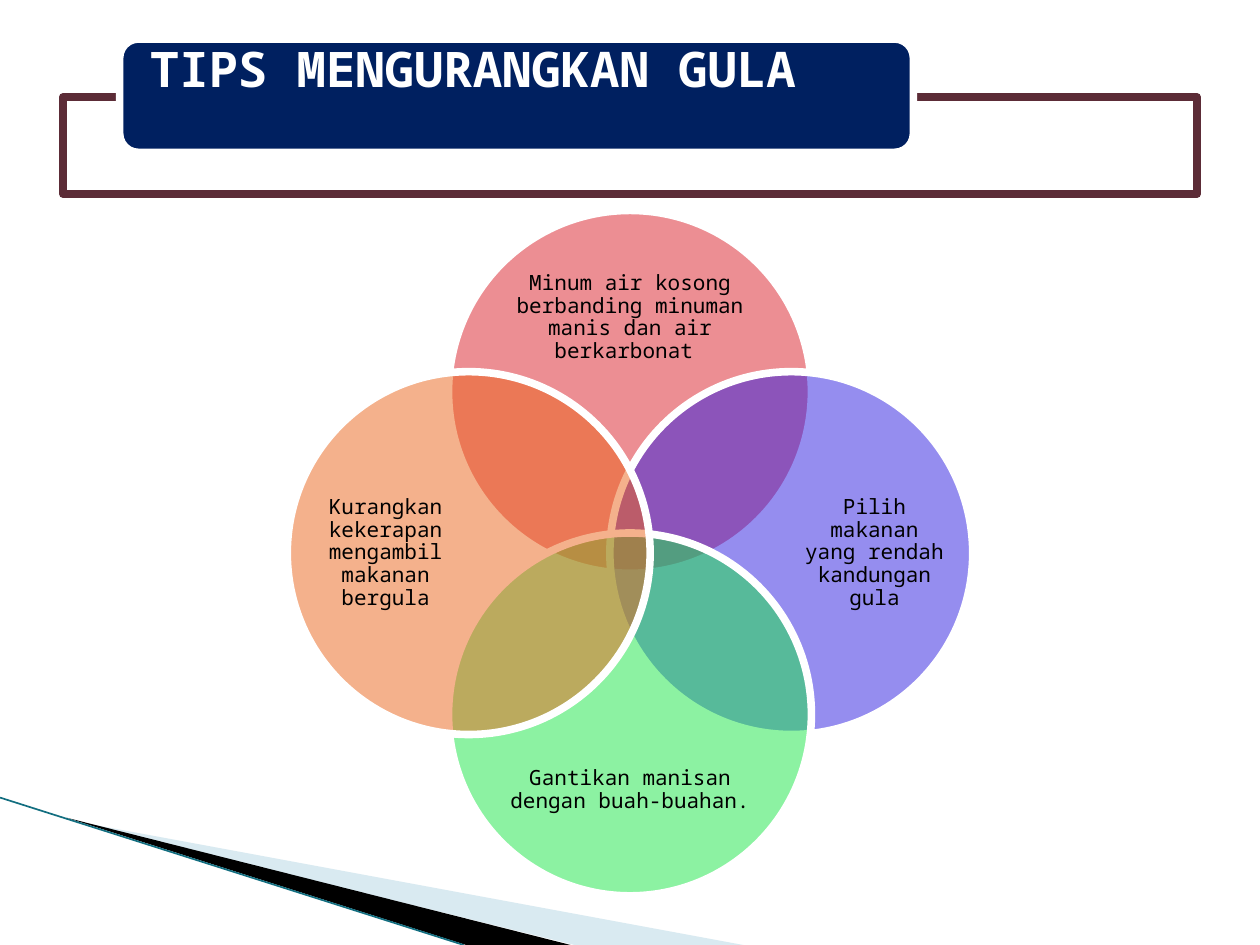
from dataclasses import dataclass

from lxml import etree
from pptx import Presentation
from pptx.dml.color import RGBColor
from pptx.enum.shapes import MSO_CONNECTOR, MSO_SHAPE
from pptx.enum.text import MSO_ANCHOR, PP_ALIGN
from pptx.oxml.ns import qn
from pptx.util import Inches, Pt

ELLIPSE, RECTANGLE, ROUNDED = MSO_SHAPE.OVAL, MSO_SHAPE.RECTANGLE, MSO_SHAPE.ROUNDED_RECTANGLE
STRAIGHT = MSO_CONNECTOR.STRAIGHT
TOP, MIDDLE = MSO_ANCHOR.TOP, MSO_ANCHOR.MIDDLE
LEFT, CENTER = PP_ALIGN.LEFT, PP_ALIGN.CENTER
TITLE_ONLY = 5


@dataclass(frozen=True)
class Theme:
    """Colours, font and type sizes of the slide."""
    font: str = "Noto Sans Mono"
    title_size: float = 28
    label_size: float = 12
    outline: float = 4.33
    white: str = "FFFFFF"
    black: str = "000000"
    navy: str = "002060"
    maroon: str = "5C2C37"
    pale_blue: str = "A0CBDC"
    teal: str = "126E80"
    red: str = "DA1F28"
    violet: str = "2D1CE1"
    green: str = "1BE747"
    orange: str = "EB641B"


THEME = Theme()
CENTER_X, CENTER_Y = 5, 4.39
DIAMETER, REACH = 2.88, 1.28
WIDE, TALL = (2.22, 0.92), (1.11, 2.22)
PETALS = [
    ("Minum air kosong berbanding minuman manis dan air berkarbonat ",
     THEME.red, (0, -1), WIDE, (0, -1.87)),
    ("Pilih makanan yang rendah kandungan gula",
     THEME.violet, (1, 0), TALL, (1.94, 0)),
    ("Gantikan manisan dengan buah-buahan.",
     THEME.green, (0, 1), WIDE, (0, 1.88)),
    ("Kurangkan kekerapan mengambil makanan bergula",
     THEME.orange, (-1, 0), TALL, (-1.94, 0)),
]


def inches(*values):
    """Convert several numbers to lengths."""
    return [Inches(value) for value in values]


def centred(x, y, width, height):
    """Return the left, top, width and height of a box around a point."""
    return x - width / 2, y - height / 2, width, height


def set_fill(shape, color, opacity=100):
    """Give a shape a solid fill with an opacity in percent."""
    shape.shadow.inherit = False
    shape.fill.solid()
    shape.fill.fore_color.rgb = RGBColor.from_string(color)
    if opacity < 100:
        tone = shape.fill._xPr.find(qn("a:solidFill"))[0]
        etree.SubElement(tone, qn("a:alpha"), val=str(opacity * 1000))


def set_line(shape, color, width):
    """Give a shape or connector a solid line."""
    shape.line.color.rgb = RGBColor.from_string(color)
    shape.line.width = Pt(width)


def add_outlined(slide, kind, place, fill, line, opacity=100):
    """Add a preset shape with the heavy outline."""
    shape = slide.shapes.add_shape(kind, *inches(*place))
    set_fill(shape, fill, opacity)
    set_line(shape, line, THEME.outline)


def add_wedge(slide, points, color, opacity=100):
    """Add a closed freeform without an outline."""
    start, *rest = [inches(*point) for point in points]
    builder = slide.shapes.build_freeform(*start, scale=1.0)
    builder.add_line_segments(rest, close=True)
    wedge = builder.convert_to_shape()
    set_fill(wedge, color, opacity)
    wedge.line.fill.background()


def add_stroke(slide, start, end, color, width):
    """Add a straight line without a shadow."""
    stroke = slide.shapes.add_connector(STRAIGHT, *inches(*start, *end))
    set_line(stroke, color, width)
    etree.SubElement(stroke._element.spPr, qn("a:effectLst"))


def write(box, text, size, color, align, anchor, margin=0, bold=False):
    """Put one formatted paragraph in a box."""
    frame = box.text_frame
    frame.word_wrap = True
    frame.vertical_anchor = anchor
    frame.margin_left = frame.margin_right = Inches(margin)
    frame.margin_top = frame.margin_bottom = 0
    para = frame.paragraphs[0]
    para.alignment = align
    para.line_spacing = 0.9
    para.space_before = Pt(0)
    span = para.add_run()
    span.text = text
    span.font.name = THEME.font
    span.font.size = Pt(size)
    span.font.bold = bold
    span.font.color.rgb = RGBColor.from_string(color)


def add_corner(slide):
    """Draw the wedges and the line in the lower left corner."""
    add_wedge(slide, [(0.55, 6.51), (5.9, 7.5), (4.56, 7.5)], THEME.pale_blue, 40)
    add_wedge(slide, [(0.53, 6.49), (4.53, 7.5), (3.7, 7.5)], THEME.black)
    add_stroke(slide, (0, 6.33), (3.68, 7.5), THEME.teal, 0.95)


def add_petal(slide, text, color, direction, label_size, label_offset):
    """Add one circle of the diagram and its label."""
    x, y = CENTER_X + REACH * direction[0], CENTER_Y + REACH * direction[1]
    add_outlined(slide, ELLIPSE, centred(x, y, DIAMETER, DIAMETER), color, THEME.white, 50)
    place = centred(CENTER_X + label_offset[0], CENTER_Y + label_offset[1], *label_size)
    label = slide.shapes.add_textbox(*inches(*place))
    write(label, text, THEME.label_size, THEME.black, CENTER, MIDDLE)


def add_title(slide, text):
    """Draw the banner and bring the title placeholder in front of it."""
    add_outlined(slide, RECTANGLE, (0.5, 0.77, 9, 0.77), THEME.white, THEME.maroon, 90)
    add_outlined(slide, ROUNDED, (0.95, 0.31, 6.3, 0.9), THEME.navy, THEME.white)
    title = slide.shapes.title
    title.left, title.top, title.width, title.height = inches(0.95, 0.36, 6.3, 0.85)
    write(title, text, THEME.title_size, THEME.white, LEFT, TOP, margin=0.24, bold=True)
    slide.shapes._spTree.append(title._element)


def main():
    """Build the slide and save the deck."""
    deck = Presentation()
    deck.slide_width, deck.slide_height = inches(10, 7.5)
    slide = deck.slides.add_slide(deck.slide_layouts[TITLE_ONLY])
    add_corner(slide)
    for petal in PETALS:
        add_petal(slide, *petal)
    add_title(slide, "TIPS MENGURANGKAN GULA")
    deck.save("out.pptx")


if __name__ == "__main__":
    main()
